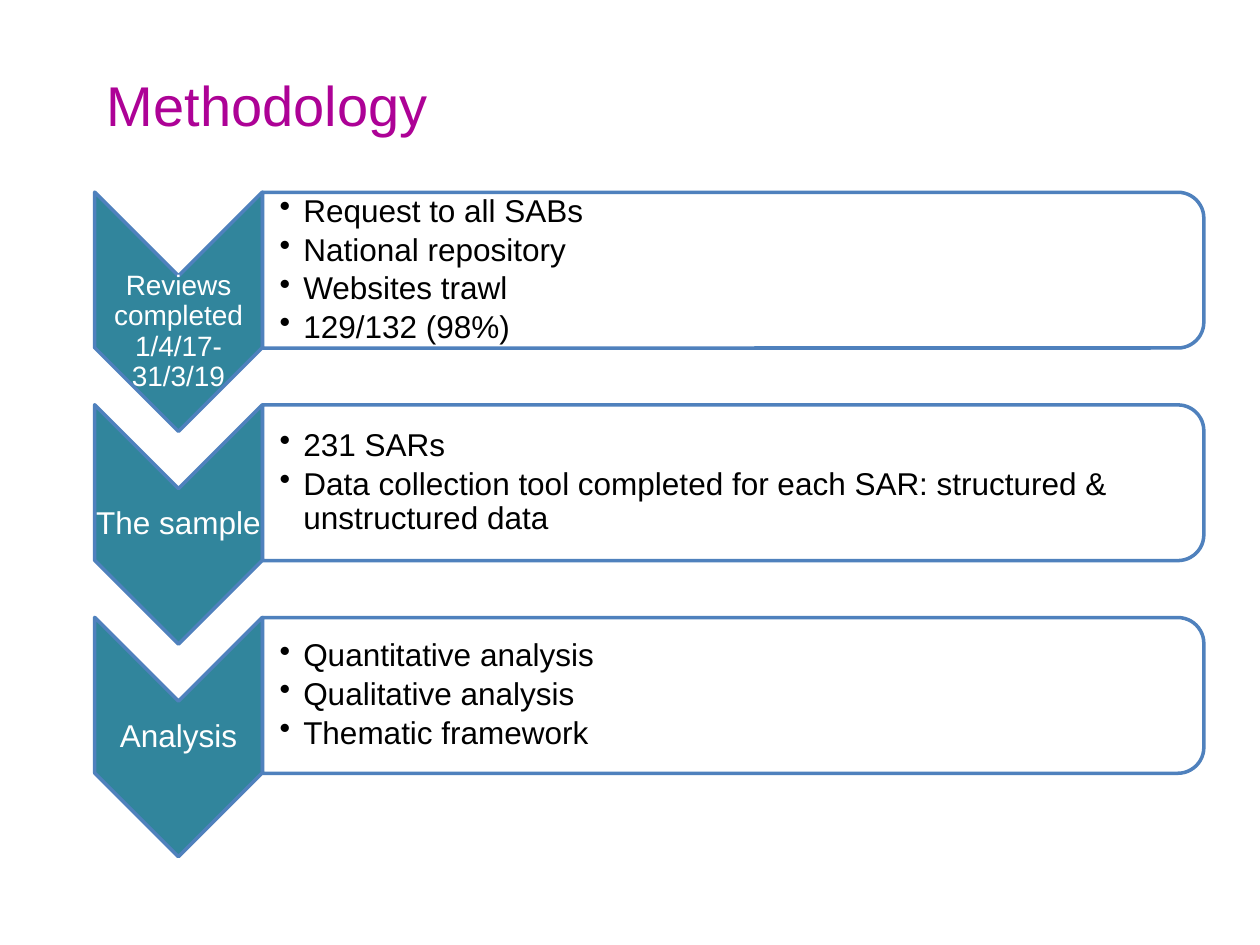
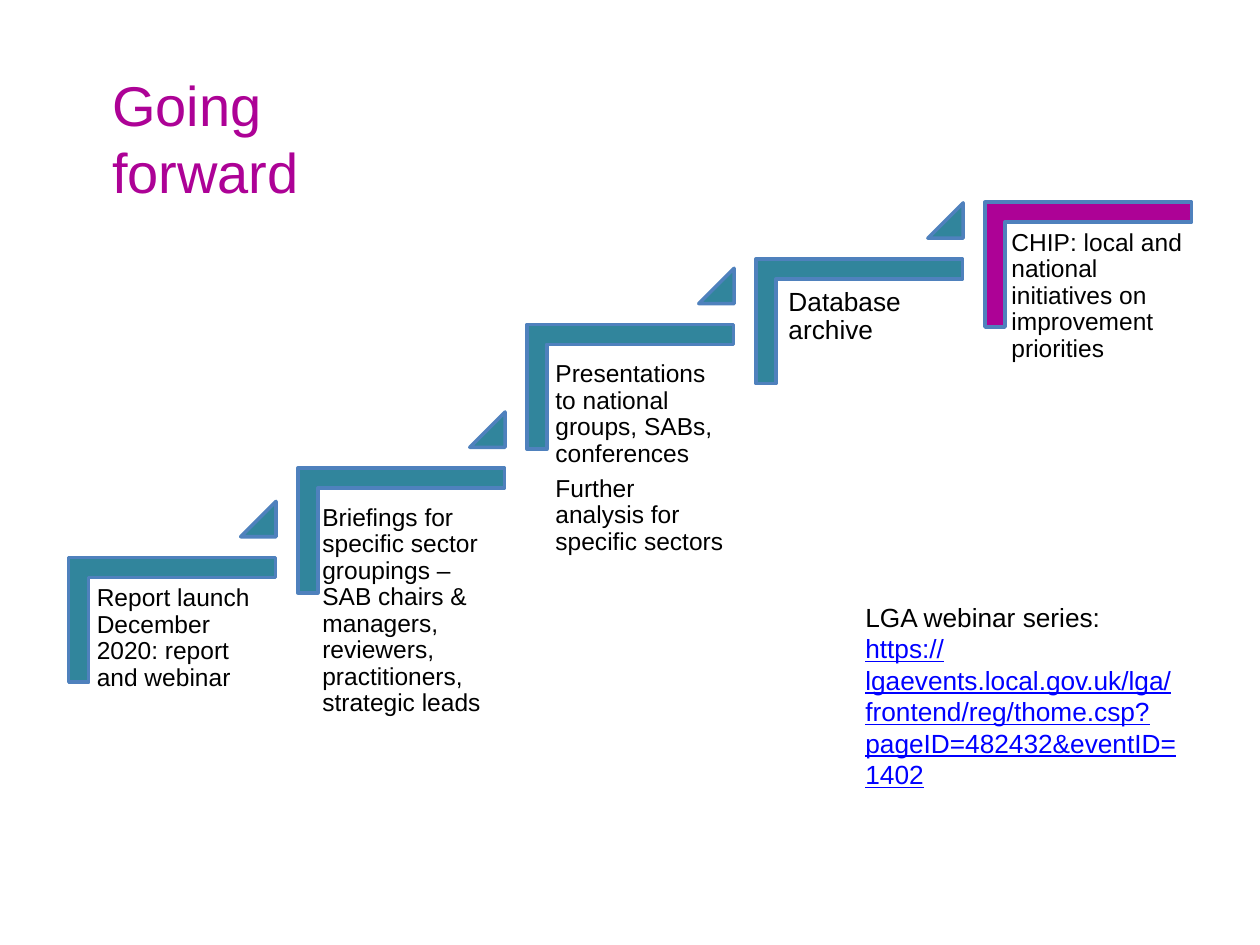
import pptx
import pptx.dml.color
import pptx.enum.shapes
import pptx.enum.text
import pptx.oxml
import pptx.oxml.ns
import pptx.util
from lxml import etree

Pt = pptx.util.Pt
RGBColor = pptx.dml.color.RGBColor
Shapes = pptx.enum.shapes.MSO_SHAPE
Align = pptx.enum.text.PP_ALIGN
Anchor = pptx.enum.text.MSO_ANCHOR
AutoSize = pptx.enum.text.MSO_AUTO_SIZE
qn = pptx.oxml.ns.qn

MAGENTA = RGBColor(0xAD, 0x02, 0x96)
TEAL = RGBColor(0x31, 0x85, 0x9C)
OUTLINE = RGBColor(0x4F, 0x81, 0xBD)
LINK = RGBColor(0x00, 0x00, 0xFF)
BLACK = RGBColor(0x00, 0x00, 0x00)
WHITE = RGBColor(0xFF, 0xFF, 0xFF)

STAGE_TOP, STAGE_PITCH = 178.2, 121.5
CHEVRON_X, PANEL_X, PANEL_RISE = 102, 419, 23.8
STEP_X, STEP_PITCH = 98.3, 130.9
MARKER_SIZE = 20.2

STAGES = [
    ("Reviews completed 1/4/17-31/3/19", 16, 11.5,
     ["Request to all SABs", "National repository", "Websites trawl", "129/132 (98%)"]),
    ("The sample", 18, 0,
     ["231 SARs",
      "Data collection tool completed for each SAR: structured & unstructured data"]),
    ("Analysis", 18, 0,
     ["Quantitative analysis", "Qualitative analysis", "Thematic framework"]),
]

STEPS = [
    (354.2, (51.1, 330.5, 106.6, 93.6), 14, TEAL,
     ["Report launch December 2020: report and webinar"]),
    (303.1, (180, 284.4, 106.6, 131), 14, TEAL,
     ["Briefings for specific sector groupings – SAB chairs & managers, "
      "reviewers, practitioners, strategic leads"]),
    (221, (313.2, 202.3, 106.6, 193), 14, TEAL,
     ["Presentations to national groups, SABs, conferences",
      "Further analysis for specific sectors"]),
    (183.6, (446.4, 160.6, 117.4, 93.6), 15, TEAL, ["Database archive"]),
    (151.2, (573.8, 127.4, 106.6, 93.6), 14, MAGENTA,
     ["CHIP: local and national initiatives on improvement priorities"]),
]


class SlideBuilder:
    font_name = "Arial"
    line_width = 2

    def __init__(self, deck):
        self.deck = deck
        self.page = None

    def new_page(self, title, left):
        self.page = self.deck.slides.add_slide(self.deck.slide_layouts[6])
        box = self.text((left, 36.7, 210, 46), [title], 32, MAGENTA, insets=(7.2, 3.6, 7.2, 3.6))
        box.text_frame.word_wrap = False
        box.text_frame.auto_size = AutoSize.SHAPE_TO_FIT_TEXT

    def shape(self, kind, center, size, fill, turn=0, adjustments=(), alpha=None):
        width, height = size
        item = self.page.shapes.add_shape(
            kind, Pt(center[0] - width / 2), Pt(center[1] - height / 2), Pt(width), Pt(height))
        item.rotation = turn
        for index, value in enumerate(adjustments):
            item.adjustments[index] = value
        item.shadow.inherit = False
        item.fill.solid()
        item.fill.fore_color.rgb = fill
        if alpha:
            color = item.fill._xPr.find(qn("a:solidFill"))[0]
            etree.SubElement(color, qn("a:alpha"), val=str(alpha * 1000))
        item.line.color.rgb = OUTLINE
        item.line.width = Pt(self.line_width)
        return item

    def text(self, area, lines, size, color, insets=(0.7, 0.7, 0.7, 0.7), align=Align.LEFT,
             anchor=Anchor.TOP, spacing=None, after=0, bullet=False):
        box = self.page.shapes.add_textbox(*[Pt(value) for value in area])
        frame = box.text_frame
        frame.word_wrap = True
        frame.vertical_anchor = anchor
        (frame.margin_left, frame.margin_top,
         frame.margin_right, frame.margin_bottom) = [Pt(value) for value in insets]
        for index, line in enumerate(lines):
            para = frame.add_paragraph() if index else frame.paragraphs[0]
            para.text = line
            para.alignment = align
            if spacing:
                para.line_spacing = spacing
                para.space_after = Pt(after * size)
            if bullet:
                self.bullet(para)
            para.font.name = self.font_name
            para.font.size = Pt(size)
            para.font.color.rgb = color
        return box

    def bullet(self, para):
        properties = para._p.get_or_add_pPr()
        properties.set("marL", str(Pt(13.5)))
        properties.set("indent", str(Pt(-13.5)))
        etree.SubElement(properties, qn("a:buChar"), char="•")

    def stage(self, middle, label, label_size, label_drop, points):
        self.shape(Shapes.CHEVRON, (CHEVRON_X, middle), (136.8, 95.8), TEAL, turn=90)
        self.text((CHEVRON_X - 47.9, middle - 20.5 + label_drop, 95.8, 41), [label], label_size,
                  WHITE, align=Align.CENTER, anchor=Anchor.MIDDLE, spacing=0.9, after=0.35)
        panel_middle = middle - PANEL_RISE
        self.shape(Shapes.ROUND_2_SAME_RECTANGLE, (PANEL_X, panel_middle), (89, 537.8), WHITE,
                   turn=90, alpha=90)
        self.text((149.8, panel_middle - 40, 533.5, 80), points, 18, BLACK,
                  insets=(10, 0.7, 0.7, 0.7), anchor=Anchor.MIDDLE, spacing=0.9, after=0.15,
                  bullet=True)

    def step(self, center, area, size, fill, lines):
        self.shape(Shapes.CORNER, center, (71.3, 118.1), fill, turn=90,
                   adjustments=(0.16, 0.16))
        self.text(area, lines, size, BLACK, insets=(4.2,) * 4, spacing=0.9, after=0.35)

    def marker(self, step_center):
        center = (step_center[0] + 49.3, step_center[1] - 57.6)
        self.shape(Shapes.ISOSCELES_TRIANGLE, center, (MARKER_SIZE, MARKER_SIZE), TEAL,
                   adjustments=(1,))


def build_methodology(builder):
    builder.new_page("Methodology", 54)
    for index, stage in enumerate(STAGES):
        builder.stage(STAGE_TOP + index * STAGE_PITCH, *stage)


def build_going_forward(builder):
    builder.new_page("Going forward", 57)
    for index, (middle, *content) in enumerate(STEPS):
        center = (STEP_X + index * STEP_PITCH, middle)
        builder.step(center, *content)
        if index < len(STEPS) - 1:
            builder.marker(center)
    webinar = builder.text(
        (487.4, 339.8, 193.7, 98),
        ["LGA webinar series:",
         "https://lgaevents.local.gov.uk/lga/frontend/reg/thome.csp?pageID=482432&eventID=1402"],
        15, BLACK, insets=(7.2, 3.6, 7.2, 3.6))
    address = webinar.text_frame.paragraphs[1]
    address.font.color.rgb = LINK
    address.font.underline = True


def main():
    deck = pptx.Presentation()
    deck.slide_width, deck.slide_height = Pt(720), Pt(540)
    builder = SlideBuilder(deck)
    build_methodology(builder)
    build_going_forward(builder)
    deck.save("out.pptx")


if __name__ == "__main__":
    main()
